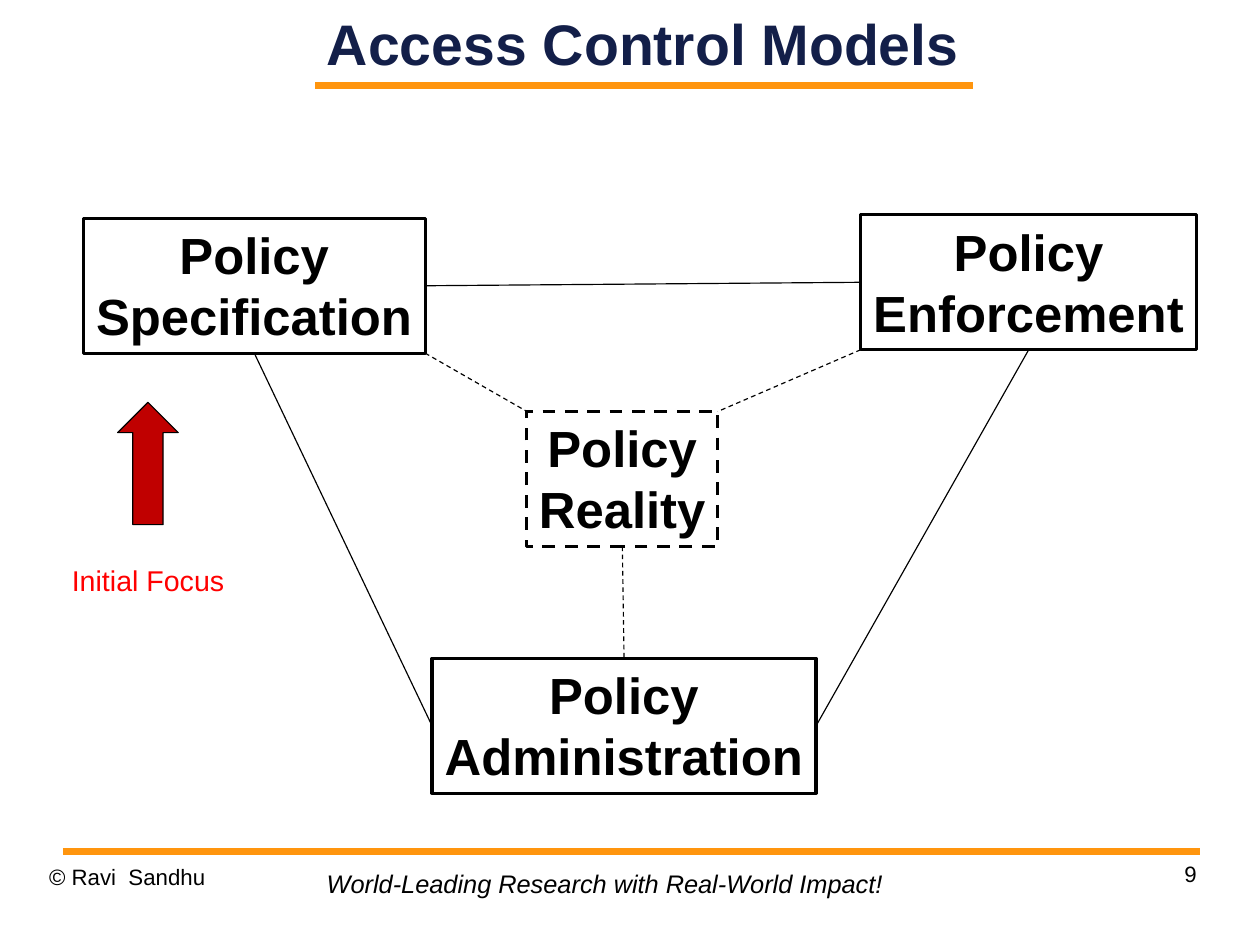
from lxml.etree import SubElement as sub
from pptx import Presentation
from pptx.dml.color import RGBColor as RGB
from pptx.enum.dml import MSO_LINE as DASH
from pptx.enum.shapes import MSO_CONNECTOR as CONN, MSO_SHAPE as SHAPE
from pptx.enum.text import MSO_ANCHOR as ANCHOR, MSO_AUTO_SIZE as AUTO, PP_ALIGN as ALIGN
from pptx.oxml.ns import qn
from pptx.util import Inches, Pt

HUES = {"ink": "000000", "navy": "131F49", "orange": "FF950E",
        "brick": "C00000", "red": "FF0000"}

# Connection sites of a box, as shares of its width and height
SITES = {"top": (0.5, 0, 0), "left": (0, 0.5, 1),
         "bottom": (0.5, 1, 2), "right": (1, 0.5, 3)}
CORNERS = {"top left": (0, 0), "top right": (1, 0),
           "bottom left": (0, 1), "bottom right": (1, 1)}


def hue(name):
    return RGB.from_string(HUES[name])


def place(shape, *spot):
    shape.left, shape.top, shape.width, shape.height = map(Inches, spot)


def write(shape, lines, size, color="ink", bold=False, italic=False,
          align=ALIGN.LEFT, anchor=ANCHOR.TOP, inset=True, wrap=False):
    frame = shape.text_frame
    frame.auto_size = AUTO.NONE
    frame.word_wrap = wrap
    frame.vertical_anchor = anchor
    if not inset:
        frame.margin_left = frame.margin_right = 0
        frame.margin_top = frame.margin_bottom = 0
    for i, line in enumerate(lines):
        para = frame.add_paragraph() if i else frame.paragraphs[0]
        para.alignment = align
        run = para.add_run()
        run.text = line
        font = run.font
        font.name, font.size = "Arial", Pt(size)
        font.bold, font.italic = bold, italic
        font.color.rgb = hue(color)


def label(slide, text, spot, size, **style):
    box = slide.shapes.add_textbox(*map(Inches, spot))
    write(box, [text], size, **style)


def stroke(line, color, width, dash=False):
    line.color.rgb = hue(color)
    line.width = Pt(width)
    if dash:
        line.dash_style = DASH.DASH


def node(slide, word, spot, dash=False):
    box = slide.shapes.add_shape(SHAPE.RECTANGLE, *map(Inches, spot))
    box.shadow.inherit = False
    box.fill.background()
    stroke(box.line, "ink", 2, dash)
    write(box, ["Policy", word], 32, bold=True, align=ALIGN.CENTER)
    return box


def draw(slide, ends, color, width, dash=False):
    line = slide.shapes.add_connector(CONN.STRAIGHT, *ends)
    sub(line._element.spPr, qn("a:effectLst"))
    stroke(line.line, color, width, dash)
    return line


def point(box, side):
    x, y = (SITES.get(side) or CORNERS[side])[:2]
    return int(box.left + x * box.width), int(box.top + y * box.height)


def join(slide, start, side, end, other, dash=False):
    ends = point(start, side) + point(end, other)
    line = draw(slide, ends, "ink", 0.75, dash)
    if side in SITES:
        line.begin_connect(start, SITES[side][2])
    if other in SITES:
        line.end_connect(end, SITES[other][2])


def main():
    # Page of 28 by 21 cm
    deck = Presentation()
    deck.slide_width = Inches(28 / 2.54)
    deck.slide_height = Inches(21 / 2.54)
    slide = deck.slides.add_slide(deck.slide_layouts[5])

    # Title and rules
    title = slide.shapes.title
    place(title, 2.41, 0, 6.43, 0.75)
    write(title, ["Access Control Models"], 36, color="navy", bold=True,
          align=ALIGN.CENTER, anchor=ANCHOR.MIDDLE, inset=False, wrap=True)
    for left, right, y in ((2.76, 8.51, 0.75), (0.55, 10.5, 7.45)):
        draw(slide, map(Inches, (left, y, right, y)), "orange", 4.31)

    # Footer
    label(slide, "© Ravi  Sandhu", (0.43, 7.55, 2.57, 0.57), 14,
          inset=False, wrap=True)
    label(slide, "World-Leading Research with Real-World Impact!",
          (2.76, 7.55, 5.08, 0.37), 16, italic=True)
    label(slide, "9", (7.9, 7.53, 2.57, 0.57), 14, align=ALIGN.RIGHT,
          inset=False, wrap=True)

    # Policy boxes
    spec = node(slide, "Specification", (0.73, 1.91, 2.99, 1.18))
    real = node(slide, "Reality", (4.61, 3.6, 1.67, 1.18), dash=True)
    force = node(slide, "Enforcement", (7.53, 1.88, 2.94, 1.18))
    admin = node(slide, "Administration", (3.78, 5.76, 3.36, 1.18))

    # Outer triangle, then dashed links to reality
    join(slide, spec, "bottom", admin, "left")
    join(slide, spec, "right", force, "left")
    join(slide, force, "bottom", admin, "right")
    join(slide, spec, "bottom right", real, "top left", dash=True)
    join(slide, force, "bottom left", real, "top right", dash=True)
    join(slide, real, "bottom", admin, "top", dash=True)

    # Focus arrow
    arrow = slide.shapes.add_shape(
        SHAPE.UP_ARROW, *map(Inches, (1.03, 3.52, 0.53, 1.07)))
    arrow.shadow.inherit = False
    arrow.fill.solid()
    arrow.fill.fore_color.rgb = hue("brick")
    stroke(arrow.line, "ink", 0.75)
    label(slide, "Initial Focus", (0.53, 4.88, 1.55, 0.4), 18, color="red")

    deck.save("out.pptx")


if __name__ == "__main__":
    main()
